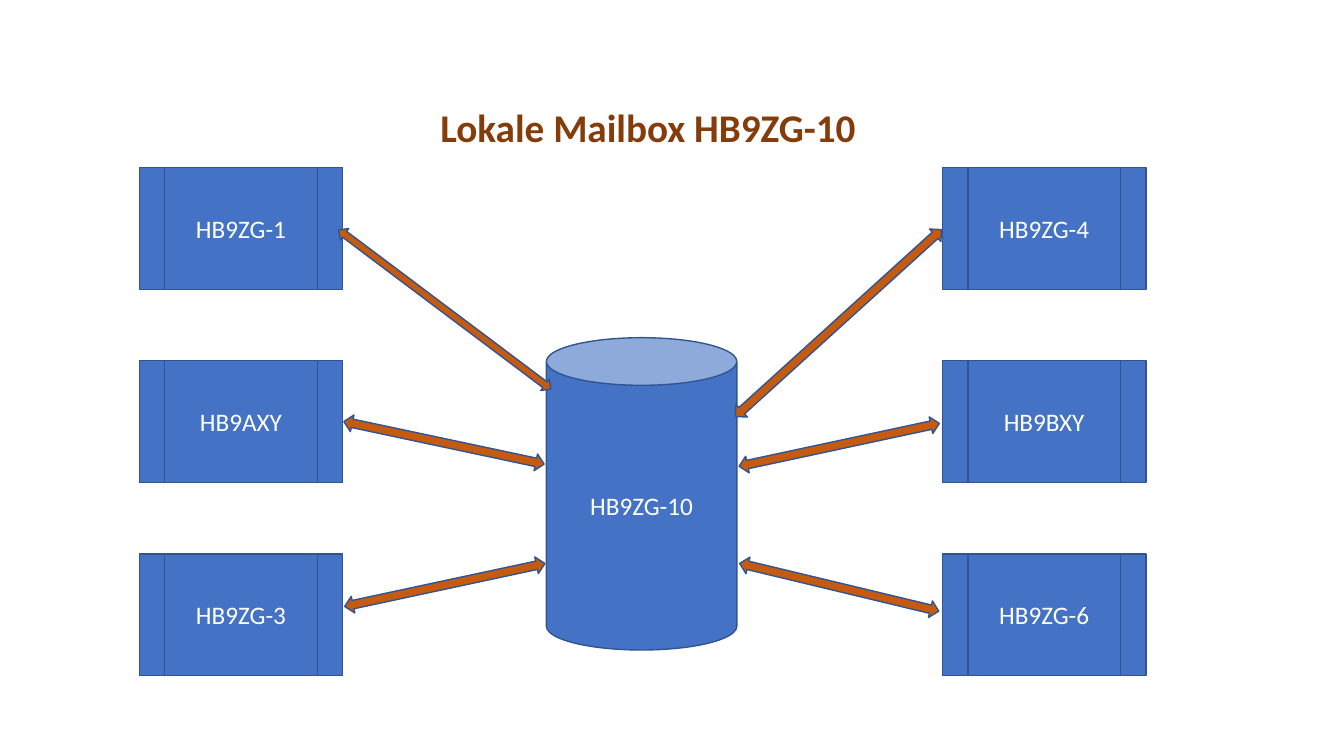
from dataclasses import dataclass

from pptx import Presentation
from pptx.dml.color import RGBColor
from pptx.enum.shapes import MSO_SHAPE
from pptx.enum.text import MSO_ANCHOR, MSO_AUTO_SIZE, PP_ALIGN
from pptx.shapes.autoshape import Shape
from pptx.slide import Slide
from pptx.util import Cm, Pt

CAN = MSO_SHAPE.CAN
STATION = MSO_SHAPE.FLOWCHART_PREDEFINED_PROCESS
DOUBLE_ARROW = MSO_SHAPE.LEFT_RIGHT_ARROW
MIDDLE = MSO_ANCHOR.MIDDLE
CENTER = PP_ALIGN.CENTER
FIT_SHAPE = MSO_AUTO_SIZE.SHAPE_TO_FIT_TEXT


@dataclass(frozen=True)
class Theme:
    font: str = "Calibri"
    node: RGBColor = RGBColor(0x44, 0x72, 0xC4)
    outline: RGBColor = RGBColor(0x32, 0x54, 0x91)
    arrow: RGBColor = RGBColor(0xC5, 0x5A, 0x11)
    title: RGBColor = RGBColor(0x84, 0x3C, 0x0B)
    label: RGBColor = RGBColor(0xFF, 0xFF, 0xFF)
    title_size: Pt = Pt(28)
    label_size: Pt = Pt(18)
    line_width: Pt = Pt(1)


@dataclass(frozen=True)
class Box:
    """Position and size in centimetres."""
    left: float
    top: float
    width: float
    height: float


@dataclass(frozen=True)
class Link:
    """Double arrow given by its centre and size in centimetres, and its angle."""
    center_x: float
    center_y: float
    angle: float
    length: float = 5.16
    thickness: float = 0.43


THEME = Theme()

TITLE_BOX = Box(10.85, 2.49, 11.35, 1.45)
MAILBOX_BOX = Box(13.77, 8.51, 4.8, 7.87)

# Stations: one column on each side of the mailbox
STATION_WIDTH, STATION_HEIGHT = 5.13, 3.07
STATION_TOP, STATION_PITCH = 4.22, 4.87
STATION_COLUMNS = {
    3.51: ("HB9ZG-1", "HB9AXY", "HB9ZG-3"),
    23.75: ("HB9ZG-4", "HB9BXY", "HB9ZG-6"),
}

LINKS = (
    Link(11.21, 7.8, 36.9, length=6.68, thickness=0.36),
    Link(11.19, 11.16, 12),
    Link(11.21, 14.74, -12.1),
    Link(21.15, 11.21, -12.1),
    Link(21.15, 14.8, 13.5),
    Link(21.13, 8.14, -42.2, length=7.01),
)


def add_filled_shape(slide: Slide, kind: MSO_SHAPE, box: Box, fill: RGBColor) -> Shape:
    shape = slide.shapes.add_shape(
        kind, Cm(box.left), Cm(box.top), Cm(box.width), Cm(box.height))
    shape.shadow.inherit = False
    shape.fill.solid()
    shape.fill.fore_color.rgb = fill
    shape.line.color.rgb = THEME.outline
    shape.line.width = THEME.line_width
    return shape


def write(shape: Shape, text: str, size: Pt, color: RGBColor, bold: bool = False) -> None:
    shape.text_frame.word_wrap = True
    paragraph = shape.text_frame.paragraphs[0]
    paragraph.text = text
    paragraph.font.name = THEME.font
    paragraph.font.size = size
    paragraph.font.bold = bold
    paragraph.font.color.rgb = color


def add_node(slide: Slide, kind: MSO_SHAPE, box: Box, label: str) -> None:
    shape = add_filled_shape(slide, kind, box, THEME.node)
    write(shape, label, THEME.label_size, THEME.label)
    shape.text_frame.vertical_anchor = MIDDLE
    shape.text_frame.paragraphs[0].alignment = CENTER


def add_link(slide: Slide, link: Link) -> None:
    box = Box(link.center_x - link.length / 2, link.center_y - link.thickness / 2,
              link.length, link.thickness)
    arrow = add_filled_shape(slide, DOUBLE_ARROW, box, THEME.arrow)
    arrow.rotation = link.angle


def add_title(slide: Slide, box: Box, text: str) -> None:
    title = slide.shapes.add_textbox(
        Cm(box.left), Cm(box.top), Cm(box.width), Cm(box.height))
    write(title, text, THEME.title_size, THEME.title, bold=True)
    title.text_frame.auto_size = FIT_SHAPE


def main() -> None:
    presentation = Presentation()
    presentation.slide_width = Cm(33.87)
    presentation.slide_height = Cm(19.05)
    slide = presentation.slides.add_slide(presentation.slide_layouts[6])

    # Mailbox in the middle
    add_node(slide, CAN, MAILBOX_BOX, "HB9ZG-10")

    # Stations left and right
    for left, labels in STATION_COLUMNS.items():
        for row, label in enumerate(labels):
            top = STATION_TOP + row * STATION_PITCH
            add_node(slide, STATION, Box(left, top, STATION_WIDTH, STATION_HEIGHT), label)

    # Arrows between stations and mailbox
    for link in LINKS:
        add_link(slide, link)

    # Title
    add_title(slide, TITLE_BOX, "Lokale Mailbox HB9ZG-10")

    presentation.save("out.pptx")


if __name__ == "__main__":
    main()
